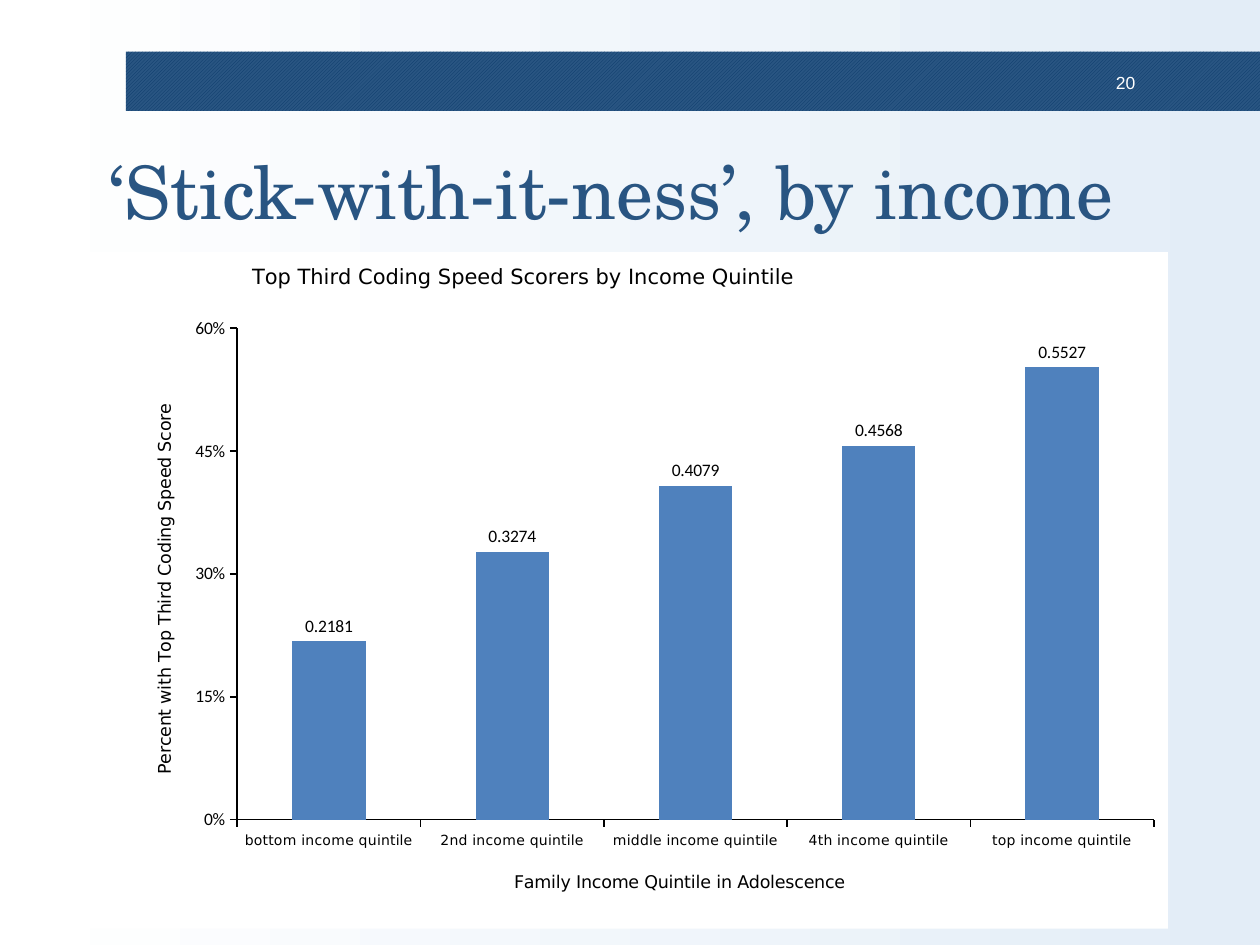
from lxml import etree
from pptx import Presentation
from pptx.chart.data import CategoryChartData
from pptx.dml.color import RGBColor
from pptx.enum.chart import XL_CHART_TYPE, XL_LABEL_POSITION, XL_TICK_LABEL_POSITION, XL_TICK_MARK
from pptx.enum.dml import MSO_PATTERN
from pptx.enum.shapes import MSO_SHAPE
from pptx.enum.text import MSO_ANCHOR, PP_ALIGN
from pptx.oxml import parse_xml
from pptx.oxml.ns import nsdecls, qn
from pptx.util import Inches, Pt

COLUMN = XL_CHART_TYPE.COLUMN_CLUSTERED
OUTSIDE_END = XL_LABEL_POSITION.OUTSIDE_END
LOW = XL_TICK_LABEL_POSITION.LOW
TICK_OUT, TICK_NONE = XL_TICK_MARK.OUTSIDE, XL_TICK_MARK.NONE
DIAGONAL = MSO_PATTERN.LIGHT_UPWARD_DIAGONAL
RECTANGLE = MSO_SHAPE.RECTANGLE
MIDDLE = MSO_ANCHOR.MIDDLE
LEFT, RIGHT = PP_ALIGN.LEFT, PP_ALIGN.RIGHT

COLORS = {
    "white": "FFFFFF", "black": "000000", "sky": "E3EDF7",
    "navy": "295582", "stripe": "083868", "column": "4F81BD",
}
CHART_FONT = "DejaVu Sans"
SCORES = {
    "bottom income quintile": 0.2181,
    "2nd income quintile": 0.3274,
    "middle income quintile": 0.4079,
    "4th income quintile": 0.4568,
    "top income quintile": 0.5527,
}


def rgb(name):
    return RGBColor.from_string(COLORS[name])


def style_font(font, size, face, color="black"):
    font.size, font.name, font.bold = Pt(size), face, False
    font.color.rgb = rgb(color)


def write_text(frame, text, size=10, face=CHART_FONT, color="black", align=None):
    paragraph = frame.paragraphs[0]
    if align is not None:
        paragraph.alignment = align
    run = paragraph.add_run()
    run.text = text
    style_font(run.font, size, face, color)


def place(layout, x, y, w=None, h=None):
    manual = etree.SubElement(layout, qn("c:manualLayout"))
    settings = {"xMode": "edge", "yMode": "edge", "x": x, "y": y}
    if w is not None:
        settings = {"layoutTarget": "inner", **settings, "w": w, "h": h}
    for tag, value in settings.items():
        etree.SubElement(manual, qn(f"c:{tag}")).set("val", str(value))


def white_area():
    return parse_xml(
        f'<c:spPr {nsdecls("c", "a")}><a:solidFill><a:srgbClr val="{COLORS["white"]}"/>'
        "</a:solidFill><a:ln><a:noFill/></a:ln></c:spPr>")


class QuintileSlide:
    """Holds the slide and draws its elements in one style."""

    def __init__(self, deck):
        self.slide = deck.slides.add_slide(deck.slide_layouts[6])

    def background(self, start, end):
        fill = self.slide.background.fill
        fill.gradient()
        fill.gradient_angle = 0
        for stop, color, position in zip(fill.gradient_stops, (start, end), (0, 1)):
            stop.color.rgb, stop.position = rgb(color), position

    def band(self, x, y, w, h):
        band = self.slide.shapes.add_shape(RECTANGLE, Inches(x), Inches(y), Inches(w), Inches(h))
        band.shadow.inherit = False
        band.line.fill.background()
        band.fill.patterned()
        band.fill.pattern = DIAGONAL
        band.fill.fore_color.rgb, band.fill.back_color.rgb = rgb("stripe"), rgb("navy")

    def text(self, text, x, y, w, h, inset=0.04, **style):
        box = self.slide.shapes.add_textbox(Inches(x), Inches(y), Inches(w), Inches(h))
        frame = box.text_frame
        frame.word_wrap, frame.vertical_anchor = True, MIDDLE
        frame.margin_left = frame.margin_right = Inches(inset)
        frame.margin_top = frame.margin_bottom = Inches(0.04)
        write_text(frame, text, **style)

    def chart_title(self, title, text, x, y, size=10, overlay=False):
        write_text(title.text_frame, text, size=size)
        element = title._element
        layout = element.find(qn("c:layout"))
        if layout is None:
            layout = etree.Element(qn("c:layout"))
            element.find(qn("c:tx")).addnext(layout)
        place(layout, x, y)
        if overlay:
            element.find(qn("c:overlay")).set("val", "1")

    def axis(self, axis, size, face):
        axis.has_major_gridlines = False
        axis.major_tick_mark, axis.minor_tick_mark = TICK_OUT, TICK_NONE
        axis.format.line.color.rgb = rgb("black")
        axis.format.line.width = Pt(1)
        style_font(axis.tick_labels.font, size, face)

    def column_chart(self, x, y, w, h):
        data = CategoryChartData()
        data.categories = list(SCORES)
        data.add_series("Series 1", list(SCORES.values()))
        chart = self.slide.shapes.add_chart(
            COLUMN, Inches(x), Inches(y), Inches(w), Inches(h), data).chart
        style_font(chart.font, 10, "Arial")
        chart.has_legend = False
        self.chart_title(chart.chart_title, "Top Third Coding Speed Scorers by Income Quintile",
                         0.16, 0.01, size=12, overlay=True)

        quintiles, percents = chart.category_axis, chart.value_axis
        self.axis(quintiles, 8, CHART_FONT)
        quintiles.tick_label_position = LOW
        self.chart_title(quintiles.axis_title, "Family Income Quintile in Adolescence", 0.4, 0.91)
        self.axis(percents, 10, "Calibri")
        percents.minimum_scale, percents.maximum_scale, percents.major_unit = 0, 0.6, 0.15
        percents.tick_labels.number_format = "0%"
        percents.tick_labels.number_format_is_linked = False
        self.chart_title(percents.axis_title, "Percent with Top Third Coding Speed Score", 0.07, 0.22)

        plot = chart.plots[0]
        plot.gap_width, plot.vary_by_categories = 150, False
        scores = plot.series[0]
        scores.format.fill.solid()
        scores.format.fill.fore_color.rgb = rgb("column")
        labels = scores.data_labels
        labels.show_value, labels.position = True, OUTSIDE_END
        labels.number_format, labels.number_format_is_linked = "0.####", False
        style_font(labels.font, 10, "Calibri")

        body = chart._chartSpace.find(qn("c:chart"))
        body.addnext(white_area())
        area = body.find(qn("c:plotArea"))
        area.append(white_area())
        layout = area.find(qn("c:layout"))
        if layout is None:
            layout = etree.Element(qn("c:layout"))
            area.insert(0, layout)
        place(layout, 0.15, 0.113, 0.837, 0.726)


def main():
    deck = Presentation()
    deck.slide_width, deck.slide_height = Inches(10), Inches(7.5)
    page = QuintileSlide(deck)
    page.background("white", "sky")
    page.band(1, 0.41, 9, 0.47)
    page.text("20", 8.67, 0.54, 0.41, 0.23, inset=0.07, face="Arial", color="white", align=RIGHT)
    page.text("‘Stick-with-it-ness’, by income", 0.83, 0.94, 8.19, 1.13,
              size=42, face="TeX Gyre Schola", color="navy", align=LEFT)
    page.column_chart(0.58, 2, 8.69, 5.37)
    deck.save("out.pptx")


if __name__ == "__main__":
    main()
